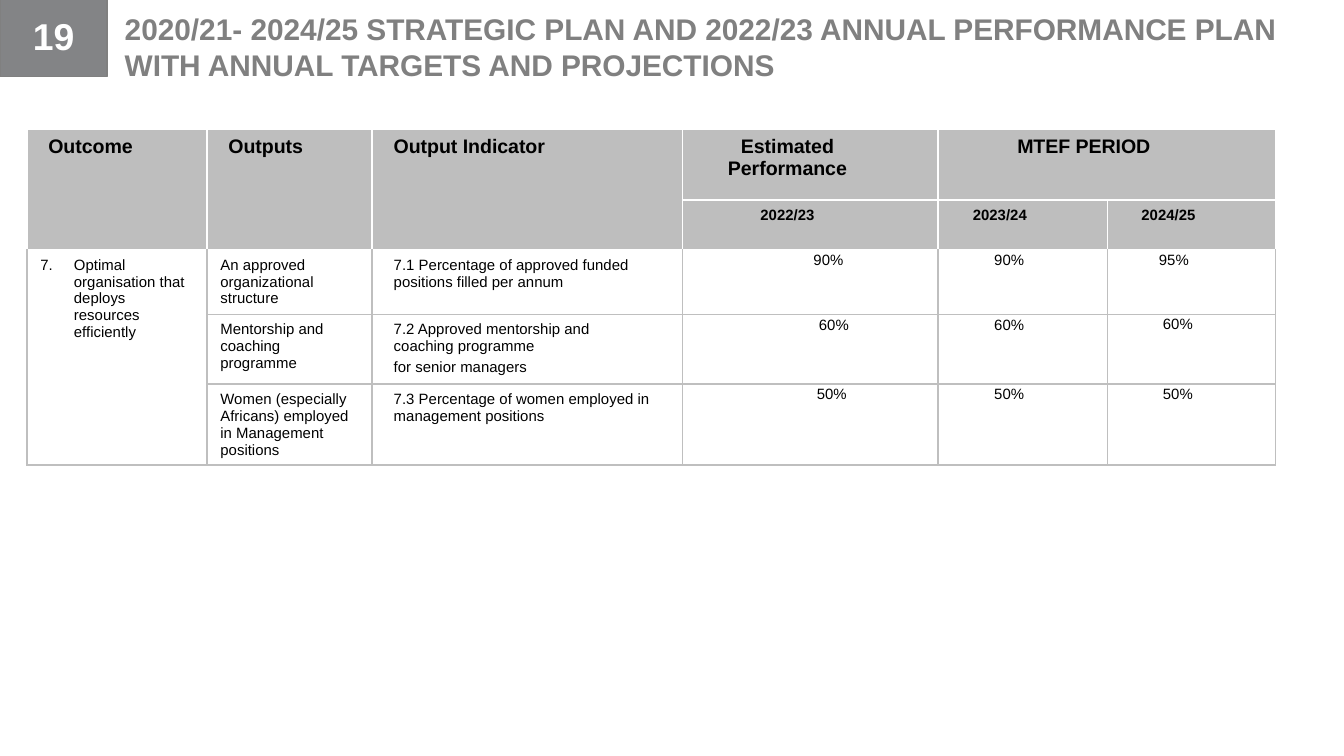
from lxml import etree
from pptx import Presentation
from pptx.dml.color import RGBColor
from pptx.enum import shapes, text
from pptx.oxml import ns
from pptx.util import Inches, Pt

FONT = "Arial"
BLACK = RGBColor(0x00, 0x00, 0x00)
WHITE = RGBColor(0xFF, 0xFF, 0xFF)
GREY = RGBColor(0x80, 0x80, 0x80)
BADGE_GREY = RGBColor(0x83, 0x84, 0x86)
HEADER_GREY = RGBColor(0xBE, 0xBE, 0xBE)
BORDER_GREY = RGBColor(0xBF, 0xBF, 0xBF)

TITLE = ("2020/21- 2024/25 STRATEGIC PLAN AND 2022/23 ANNUAL PERFORMANCE PLAN "
         "WITH ANNUAL TARGETS AND PROJECTIONS")
PAGE_NUMBER = "19"

COLUMN_WIDTHS = [1.34, 1.23, 2.31, 1.9, 1.26, 1.25]
ROW_HEIGHTS = [0.53, 0.37, 0.48, 0.52, 0.6]
HEADER_ROWS = 2
MERGES = [((0, 0), (1, 0)), ((0, 1), (1, 1)), ((0, 2), (1, 2)),
          ((0, 4), (0, 5)), ((2, 0), (4, 0))]

HEADINGS = ["Outcome", "Outputs", "Output Indicator"]
PERIODS = ["Estimated Performance", "MTEF PERIOD"]
YEARS = ["2022/23", "2023/24", "2024/25"]
OUTCOME_NUMBER = 7
OUTCOME = "Optimal organisation that deploys resources efficiently"

EXACT, LOOSE = Pt(10.3), 1.07
# output, indicator paragraphs, targets as (value, left inset, right inset, line spacing)
TARGET_ROWS = [
    ("An approved organizational structure",
     ["7.1 Percentage of approved funded positions filled per annum"],
     [("90%", 0.27, 0, EXACT), ("90%", 0, 0.2, EXACT), ("95%", 0, 0.26, EXACT)]),
    ("Mentorship and coaching programme",
     ["7.2 Approved mentorship and coaching programme", "for senior managers"],
     [("60%", 0.35, 0, EXACT), ("60%", 0, 0.2, EXACT), ("60%", 0, 0.2, LOOSE)]),
    ("Women (especially Africans) employed in Management positions",
     ["7.3 Percentage of women employed in management positions"],
     [("50%", 0.32, 0, LOOSE), ("50%", 0, 0.2, LOOSE), ("50%", 0, 0.2, LOOSE)]),
]


def style(para, size, color, bold=False, align=text.PP_ALIGN.LEFT):
    para.alignment = align
    para.font.name = FONT
    para.font.size = Pt(size)
    para.font.bold = bold
    para.font.color.rgb = color


def set_borders(cell, color, top_color):
    properties = cell._tc.get_or_add_tcPr()
    for side in "LRTB":
        line = etree.SubElement(properties, ns.qn(f"a:ln{side}"), w=str(Pt(1)))
        fill = etree.SubElement(line, ns.qn("a:solidFill"))
        etree.SubElement(fill, ns.qn("a:srgbClr"),
                         val=str(top_color if side == "T" else color))


def write(cell, lines, size=8, bold=False, align=text.PP_ALIGN.LEFT,
          left=0.1, right=0.1, edge=0.05, before=2, spacing=None):
    cell.margin_left, cell.margin_right = Inches(left), Inches(right)
    cell.margin_top = cell.margin_bottom = Inches(edge)
    cell.text_frame.text = "\n".join(lines)
    for para in cell.text_frame.paragraphs:
        style(para, size, BLACK, bold, align)
        para.space_before = Pt(before)
        if spacing:
            para.line_spacing = spacing


def number_paragraph(para, start):
    properties = para._p.get_or_add_pPr()
    properties.set("marL", str(Inches(0.25)))
    properties.set("indent", str(-Inches(0.25)))
    bullet = etree.Element(ns.qn("a:buAutoNum"), type="arabicPeriod", startAt=str(start))
    properties.find(ns.qn("a:defRPr")).addprevious(bullet)


def add_targets_table(page):
    frame = page.shapes.add_table(
        len(ROW_HEIGHTS), len(COLUMN_WIDTHS), Inches(0.2), Inches(0.96),
        Inches(sum(COLUMN_WIDTHS)), Inches(sum(ROW_HEIGHTS)))
    table = frame.table
    table.first_row = table.horz_banding = False
    for column, width in zip(table.columns, COLUMN_WIDTHS):
        column.width = Inches(width)
    for row, height in zip(table.rows, ROW_HEIGHTS):
        row.height = Inches(height)

    for r, row in enumerate(table.rows):
        for cell in row.cells:
            if r < HEADER_ROWS:
                set_borders(cell, WHITE, WHITE)
                cell.fill.solid()
                cell.fill.fore_color.rgb = HEADER_GREY
            else:
                set_borders(cell, BORDER_GREY, WHITE if r == HEADER_ROWS else BORDER_GREY)
                cell.fill.background()
    for first, last in MERGES:
        table.cell(*first).merge(table.cell(*last))

    center = text.PP_ALIGN.CENTER
    header = dict(bold=True, left=0.16, before=1.7)
    for c, heading in enumerate(HEADINGS):
        write(table.cell(0, c), [heading], size=10.5, **header)
    for c, period in enumerate(PERIODS, len(HEADINGS)):
        write(table.cell(0, c), [period], size=10.5, align=center, right=0.5, **header)
    for c, year in enumerate(YEARS, len(HEADINGS)):
        write(table.cell(1, c), [year], align=center, right=0.5, **header)

    outcome = table.cell(HEADER_ROWS, 0)
    write(outcome, [OUTCOME], right=0.15)
    number_paragraph(outcome.text_frame.paragraphs[0], OUTCOME_NUMBER)
    for r, (output, indicator, targets) in enumerate(TARGET_ROWS, HEADER_ROWS):
        write(table.cell(r, 1), [output])
        write(table.cell(r, 2), indicator, left=0.16, right=0.23)
        for c, (value, left, right, spacing) in enumerate(targets, len(HEADINGS)):
            write(table.cell(r, c), [value], align=center, left=left, right=right,
                  edge=0, before=0, spacing=spacing)


def add_title(page):
    box = page.shapes.add_textbox(Inches(0.83), Inches(0.03), Inches(9.17), Inches(0.84))
    box.text_frame.word_wrap = True
    box.text_frame.text = TITLE
    style(box.text_frame.paragraphs[0], 16, GREY, bold=True)


def add_page_badge(page):
    badge = page.shapes.add_shape(shapes.MSO_SHAPE.RECTANGLE, Inches(0), Inches(-0.04),
                                  Inches(0.8), Inches(0.61))
    badge.shadow.inherit = False
    badge.fill.solid()
    badge.fill.fore_color.rgb = BADGE_GREY
    badge.line.color.rgb = GREY
    badge.line.width = Pt(1)
    badge.text_frame.text = PAGE_NUMBER
    badge.text_frame.vertical_anchor = text.MSO_ANCHOR.MIDDLE
    style(badge.text_frame.paragraphs[0], 20, WHITE, True, text.PP_ALIGN.CENTER)


def main():
    deck = Presentation()
    deck.slide_width = Inches(10)
    deck.slide_height = deck.slide_width * 9 // 16
    page = deck.slides.add_slide(deck.slide_layouts[6])
    add_targets_table(page)
    add_title(page)
    add_page_badge(page)
    deck.save("out.pptx")


if __name__ == "__main__":
    main()
